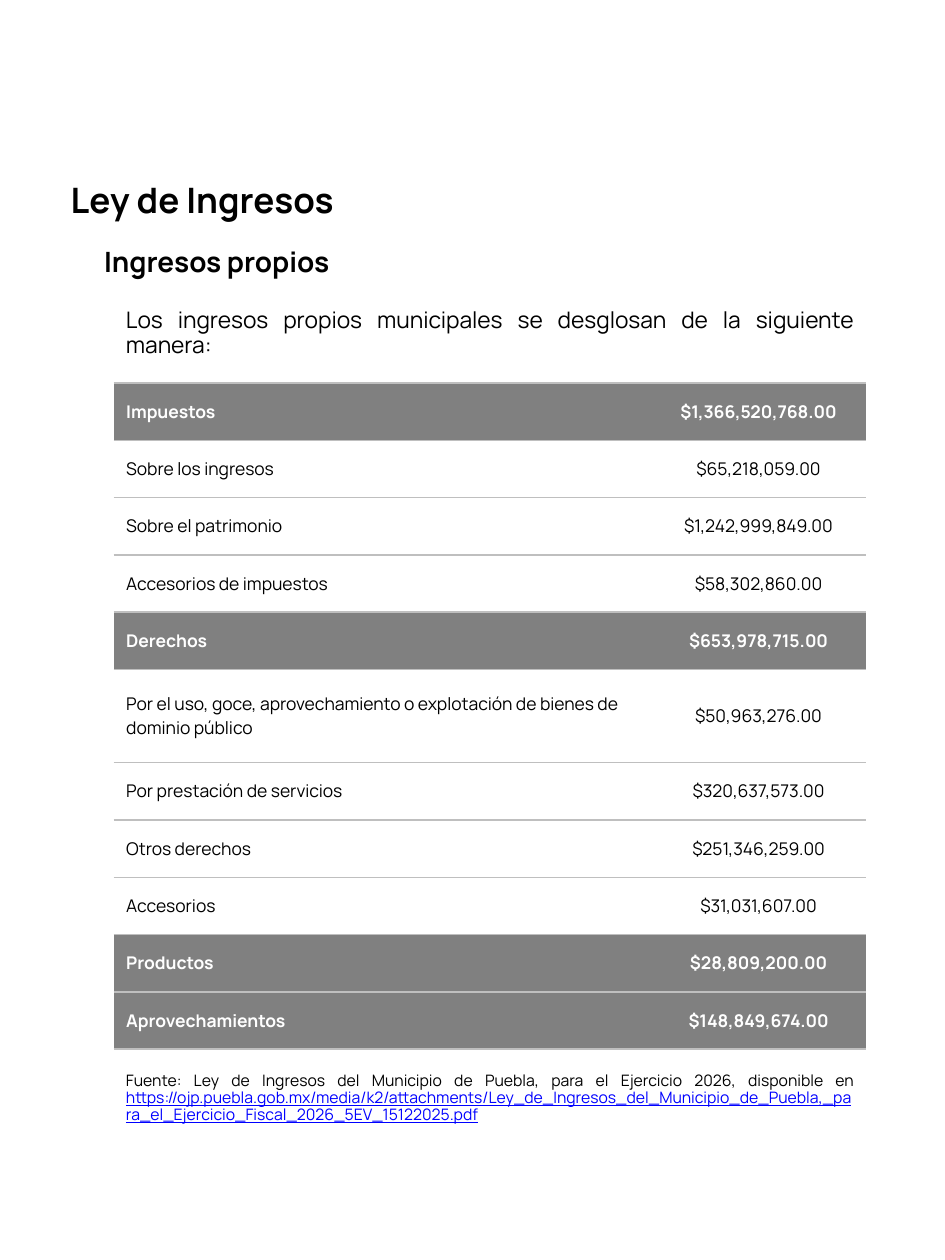
from dataclasses import dataclass
from typing import Any

import lxml.etree
import pptx
import pptx.dml.color
import pptx.enum.text
import pptx.oxml.ns
import pptx.util

Cm = pptx.util.Cm
Pt = pptx.util.Pt
RGBColor = pptx.dml.color.RGBColor
ALIGN = pptx.enum.text.PP_ALIGN
ANCHOR = pptx.enum.text.MSO_ANCHOR
qn = pptx.oxml.ns.qn

BLACK = RGBColor(0x00, 0x00, 0x00)
WHITE = RGBColor(0xFF, 0xFF, 0xFF)
GRAY = RGBColor(0x80, 0x80, 0x80)
RULE = RGBColor(0xBF, 0xBF, 0xBF)
LINK = RGBColor(0x00, 0x00, 0xFF)
FONT = "Manrope"

LEFT, WIDTH = 2.29, 15.16
TABLE_TOP, TABLE_HEIGHT = 7.72, 13.44
AMOUNT_WIDTH, TALL_ROW = 4.32, 1.88


@dataclass(frozen=True)
class Block:
    left: float
    top: float
    width: float
    height: float
    size: int
    runs: tuple[str, ...]
    bold: bool = False
    align: Any = ALIGN.LEFT


@dataclass(frozen=True)
class Income:
    concept: str
    amount: str
    heading: bool = False
    tall: bool = False


TITLE = Block(1.17, 3.56, 15.62, 1.12, 20, ("Ley de Ingresos",), bold=True)
BLOCKS = (
    Block(1.85, 4.88, 16.61, 0.94, 16, ("Ingresos propios",), bold=True),
    Block(LEFT, 6.1, WIDTH, 1.37, 13,
          ("Los ingresos propios municipales se desglosan de la siguiente manera:",),
          align=ALIGN.JUSTIFY),
    Block(LEFT, 21.51, WIDTH, 1.42, 9,
          ("Fuente: Ley de Ingresos del Municipio de Puebla, para el Ejercicio 2026, disponible en ",
           "https://ojp.puebla.gob.mx/media/k2/attachments/Ley_de_Ingresos_del_Municipio_de_Puebla,"
           "_para_el_Ejercicio_Fiscal_2026_5EV_15122025.pdf"),
          align=ALIGN.JUSTIFY),
)
INCOMES = (
    Income("Impuestos", "$1,366,520,768.00", heading=True),
    Income("Sobre los ingresos", "$65,218,059.00"),
    Income("Sobre el patrimonio", "$1,242,999,849.00"),
    Income("Accesorios de impuestos", "$58,302,860.00"),
    Income("Derechos", "$653,978,715.00", heading=True),
    Income("Por el uso, goce, aprovechamiento o explotación de bienes de dominio público",
           "$50,963,276.00", tall=True),
    Income("Por prestación de servicios", "$320,637,573.00"),
    Income("Otros derechos", "$251,346,259.00"),
    Income("Accesorios", "$31,031,607.00"),
    Income("Productos", "$28,809,200.00", heading=True),
    Income("Aprovechamientos", "$148,849,674.00", heading=True),
)


def apply(target: Any, formats: dict[str, Any]) -> None:
    for name, value in formats.items():
        setattr(target, name, value)


def add_run(p: Any, text: str, size: int, color: RGBColor, bold: bool = False) -> None:
    r = p.add_run()
    r.text = text
    link = text.startswith("https:")
    apply(r.font, {"name": FONT, "size": Pt(size), "bold": bold, "underline": link})
    r.font.color.rgb = LINK if link else color


def fill_block(sp: Any, block: Block) -> None:
    apply(sp, {"left": Cm(block.left), "top": Cm(block.top),
               "width": Cm(block.width), "height": Cm(block.height)})
    tf = sp.text_frame
    apply(tf, {"word_wrap": True, "vertical_anchor": ANCHOR.TOP,
               "auto_size": pptx.enum.text.MSO_AUTO_SIZE.SHAPE_TO_FIT_TEXT})
    p = tf.paragraphs[0]
    apply(p, {"alignment": block.align, "line_spacing": 0.9, "space_before": Pt(0)})
    for text in block.runs:
        add_run(p, text, block.size, BLACK, block.bold)


def set_borders(cell: Any) -> None:
    tc_pr = cell._tc.get_or_add_tcPr()
    for side in ("lnL", "lnR", "lnT", "lnB"):
        ln = lxml.etree.SubElement(tc_pr, qn(f"a:{side}"), w=str(Pt(1)))
        if side in ("lnL", "lnR"):
            lxml.etree.SubElement(ln, qn("a:noFill"))
        else:
            fill = lxml.etree.SubElement(ln, qn("a:solidFill"))
            lxml.etree.SubElement(fill, qn("a:srgbClr"), val=str(RULE))


def fill_cell(cell: Any, text: str, align: Any, heading: bool) -> None:
    set_borders(cell)
    cell.vertical_anchor = ANCHOR.MIDDLE
    if heading:
        cell.fill.solid()
        cell.fill.fore_color.rgb = GRAY
    else:
        cell.fill.background()
    p = cell.text_frame.paragraphs[0]
    p.alignment = align
    add_run(p, text, 10, WHITE if heading else BLACK, heading)


def add_income_table(s: Any, incomes: tuple[Income, ...]) -> None:
    table = s.shapes.add_table(len(incomes), 2, Cm(LEFT), Cm(TABLE_TOP),
                               Cm(WIDTH), Cm(TABLE_HEIGHT)).table
    apply(table, {"first_row": False, "horz_banding": False})
    table.columns[0].width = Cm(WIDTH - AMOUNT_WIDTH)
    table.columns[1].width = Cm(AMOUNT_WIDTH)
    row_height = (TABLE_HEIGHT - TALL_ROW) / (len(incomes) - 1)
    for i, income in enumerate(incomes):
        table.rows[i].height = Cm(TALL_ROW if income.tall else row_height)
        fill_cell(table.cell(i, 0), income.concept, ALIGN.LEFT, income.heading)
        fill_cell(table.cell(i, 1), income.amount, ALIGN.CENTER, income.heading)


def main() -> None:
    prs = pptx.Presentation()
    apply(prs, {"slide_width": Cm(19.05), "slide_height": Cm(25.4)})
    s = prs.slides.add_slide(prs.slide_layouts[5])
    fill_block(s.shapes.title, TITLE)
    for block in BLOCKS:
        sp = s.shapes.add_textbox(0, 0, 0, 0)
        fill_block(sp, block)
    add_income_table(s, INCOMES)
    prs.save("out.pptx")


if __name__ == "__main__":
    main()
